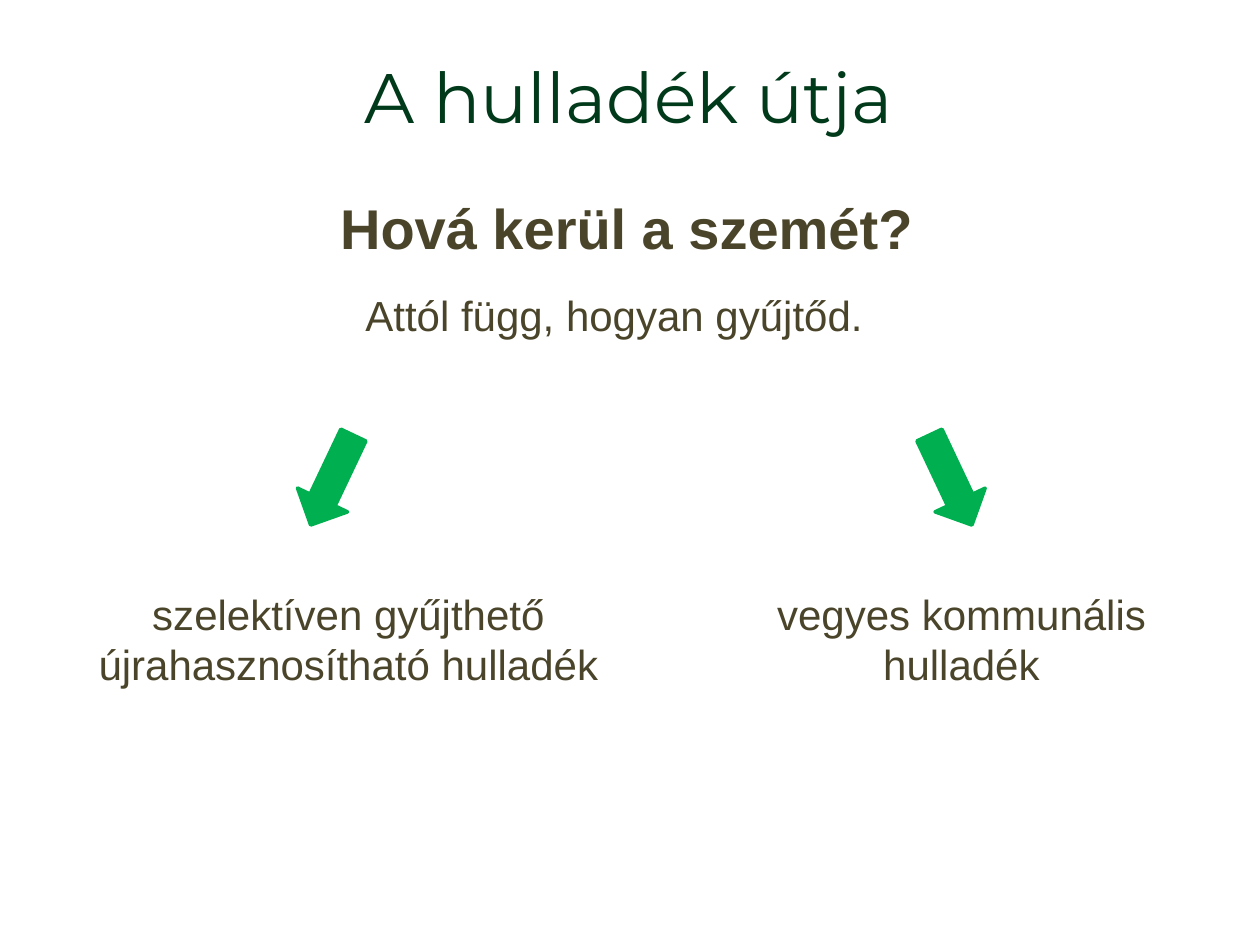
from pptx import Presentation
from pptx.dml.color import RGBColor
from pptx.enum.shapes import MSO_SHAPE as Shape
from pptx.enum.text import MSO_ANCHOR as Anchor, PP_ALIGN as Align
from pptx.util import Inches, Pt

DARK = RGBColor(0x00, 0x3A, 0x1A)
BROWN = RGBColor(0x4A, 0x45, 0x2A)
GREEN = RGBColor(0x00, 0xB0, 0x50)

prs = Presentation()
prs.slide_width, prs.slide_height = Inches(10), Inches(7.5)
slide = prs.slides.add_slide(prs.slide_layouts[6])


def add_text(text, left, top, width, height, size=24, face="Arial",
             color=BROWN, bold=False, anchor=Anchor.TOP):
    box = slide.shapes.add_textbox(
        Inches(left), Inches(top), Inches(width), Inches(height))
    frame = box.text_frame
    frame.word_wrap = True
    frame.vertical_anchor = anchor
    frame.text = text
    para = frame.paragraphs[0]
    para.alignment = Align.CENTER
    font = para.runs[0].font
    font.size, font.name, font.bold = Pt(size), face, bold
    font.color.rgb = color


# Title, question and answer
add_text("A hulladék útja", 0.49, 0.13, 9, 1.25, size=40,
         face="Montserrat", color=DARK, anchor=Anchor.MIDDLE)
add_text("Hová kerül a szemét?", 0.76, 1.49, 8.43, 0.64, size=32, bold=True)
add_text("Attól függ, hogyan gyűjtőd. ", 1.69, 2.25, 6.46, 0.5)

# Arrows to the two kinds of waste
for left, angle in ((2.24, 115.4), (7.15, 64.7)):
    arrow = slide.shapes.add_shape(
        Shape.RIGHT_ARROW, Inches(left), Inches(3.59), Inches(0.79), Inches(0.44))
    arrow.rotation = angle
    arrow.shadow.inherit = False
    arrow.fill.solid()
    arrow.fill.fore_color.rgb = GREEN
    arrow.line.color.rgb = GREEN
    arrow.line.width = Pt(2)

# Kinds of waste
for text, left, width in (
        ("szelektíven gyűjthető újrahasznosítható hulladék", 0.55, 4.43),
        ("vegyes kommunális hulladék", 5.62, 4.02)):
    add_text(text, left, 4.62, width, 0.91)

prs.save("out.pptx")
